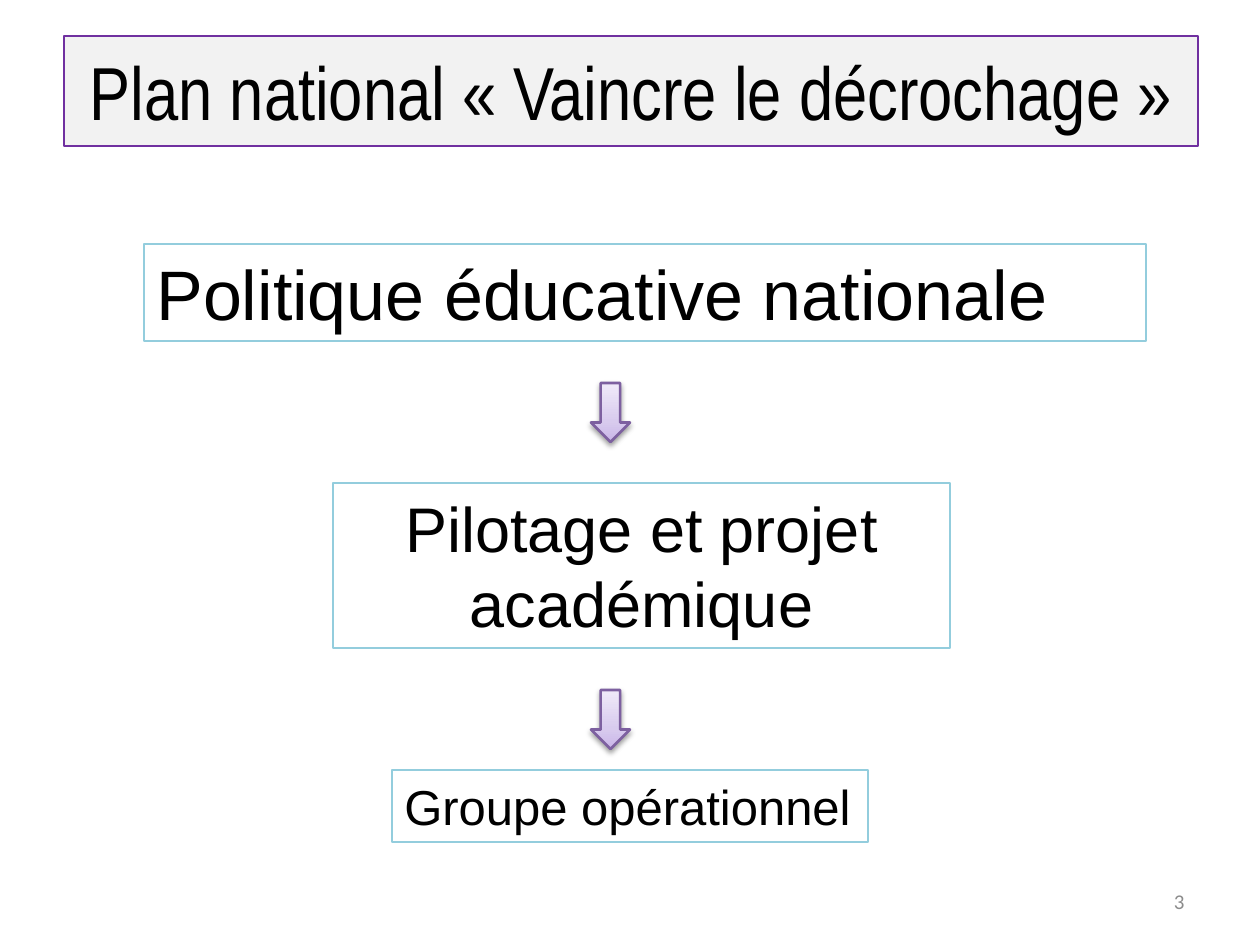
from copy import deepcopy
from dataclasses import dataclass

from lxml import etree
from pptx import Presentation
from pptx import util as u
from pptx.dml.color import RGBColor
from pptx.enum import shapes, text
from pptx.oxml.ns import qn

PX = u.Inches(1) / 126


@dataclass(frozen=True)
class Theme:
    ink: str = "000000"
    muted: str = "8C8C8C"
    title_fill: str = "F2F2F2"
    title_line: str = "7030A0"
    box_line: str = "93CDDD"
    arrow_line: str = "7D60A0"
    arrow_stops: tuple = ((0, "C9B5E8"), (0.35, "D8CBEE"), (1, "F0EAF9"))
    body_font: str = "Arial"
    title_font: str = "Arial Narrow"
    number_font: str = "Calibri"
    title_size: float = 42.9
    national_size: int = 40
    academic_size: int = 36
    group_size: int = 28
    number_size: int = 12


THEME = Theme()
ALIGN = text.PP_ALIGN
ANCHOR = text.MSO_ANCHOR
FIT = text.MSO_AUTO_SIZE


def px(length):
    return round(length * PX)


def set_all(target, values):
    for name, value in values.items():
        setattr(target, name, value)


def place(shape, left, top, width, height):
    set_all(shape, {"left": px(left), "top": px(top),
                    "width": px(width), "height": px(height)})


def outline(shape, color, points):
    shape.line.color.rgb = RGBColor.from_string(color)
    shape.line.width = u.Pt(points)


def write(shape, words, size, font=THEME.body_font, color=THEME.ink,
          align=ALIGN.LEFT, anchor=ANCHOR.TOP, fit=FIT.NONE):
    frame = shape.text_frame
    frame.text = words
    set_all(frame, {"word_wrap": True, "auto_size": fit, "vertical_anchor": anchor})
    paragraph = frame.paragraphs[0]
    paragraph.alignment = align
    run_font = paragraph.runs[0].font
    set_all(run_font, {"name": font, "size": u.Pt(size)})
    run_font.color.rgb = RGBColor.from_string(color)


def add_title(slide, words, bounds):
    title = slide.shapes.title
    place(title, *bounds)
    title.fill.solid()
    title.fill.fore_color.rgb = RGBColor.from_string(THEME.title_fill)
    outline(title, THEME.title_line, 0.75)
    write(title, words, THEME.title_size, THEME.title_font,
          align=ALIGN.CENTER, anchor=ANCHOR.MIDDLE)


def add_box(slide, words, bounds, size, align=ALIGN.LEFT):
    box = slide.shapes.add_textbox(*map(px, bounds))
    outline(box, THEME.box_line, 0.75)
    write(box, words, size, align=align, fit=FIT.SHAPE_TO_FIT_TEXT)


def add_shadow(shape):
    shape.shadow.inherit = False
    effects = shape._element.spPr.find(qn("a:effectLst"))
    shadow = etree.SubElement(effects, qn("a:outerShdw"), {
        "blurRad": str(u.Pt(3.1)), "dist": str(u.Pt(1.6)),
        "dir": "5400000", "rotWithShape": "0"})
    color = etree.SubElement(shadow, qn("a:srgbClr"), val="000000")
    etree.SubElement(color, qn("a:alpha"), val="38000")


def add_arrow(slide, top):
    arrow = slide.shapes.add_shape(
        shapes.MSO_SHAPE.DOWN_ARROW, *map(px, (591, top, 39, 59)))
    arrow.fill.gradient()
    arrow.fill.gradient_angle = 90
    stop_list = arrow._element.spPr.find(qn("a:gradFill")).find(qn("a:gsLst"))
    stop_list.append(deepcopy(stop_list[-1]))
    for stop, (position, color) in zip(arrow.fill.gradient_stops, THEME.arrow_stops):
        stop.position = position
        stop.color.rgb = RGBColor.from_string(color)
    outline(arrow, THEME.arrow_line, 1.5)
    add_shadow(arrow)


def add_page_number(slide, number, bounds):
    box = slide.shapes.add_textbox(*map(px, bounds))
    write(box, number, THEME.number_size, THEME.number_font, THEME.muted,
          ALIGN.RIGHT, ANCHOR.MIDDLE)


def main():
    presentation = Presentation()
    set_all(presentation, {"slide_width": px(1260), "slide_height": px(945)})
    slide = presentation.slides.add_slide(presentation.slide_layouts[5])
    add_title(slide, "Plan national « Vaincre le décrochage »", (64, 36, 1134, 110))
    add_box(slide, "Politique éducative nationale", (144, 244, 1002, 97),
            THEME.national_size)
    add_box(slide, "Pilotage et projet académique", (333, 483, 617, 165),
            THEME.academic_size, ALIGN.CENTER)
    add_box(slide, "Groupe opérationnel", (392, 770, 476, 72), THEME.group_size)
    for top in (383, 690):
        add_arrow(slide, top)
    add_page_number(slide, "3", (903, 876, 294, 50))
    presentation.save("out.pptx")


if __name__ == "__main__":
    main()
